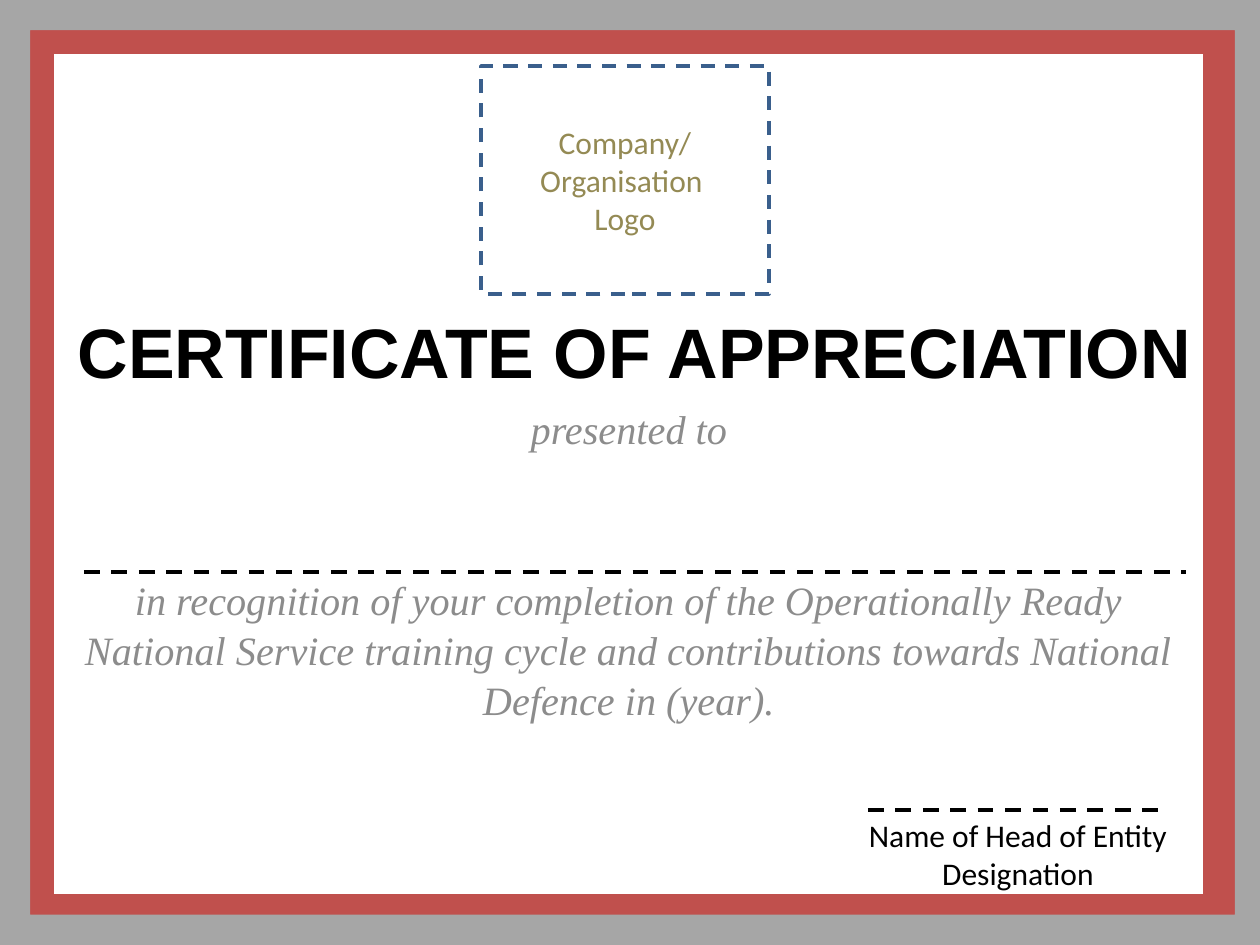
"""Build a certificate of appreciation slide."""
from pptx import Presentation
from pptx.dml.color import RGBColor
from pptx.enum.dml import MSO_LINE as Dash
from pptx.enum.shapes import MSO_CONNECTOR as Conn, MSO_SHAPE as Shape
from pptx.enum.text import MSO_ANCHOR as Anchor, PP_ALIGN as Align
from pptx.oxml.ns import qn
from pptx.util import Pt
from lxml.etree import SubElement

PX = 914400 / 126
BLACK = RGBColor(0, 0, 0)
GRAY = RGBColor(0x8C, 0x8C, 0x8C)
RED = RGBColor(0xC0, 0x50, 0x4D)
SILVER = RGBColor(0xA6, 0xA6, 0xA6)
BLUE = RGBColor(0x3A, 0x5F, 0x8C)
OLIVE = RGBColor(0x94, 0x8A, 0x54)

TITLE = ["CERTIFICATE OF APPRECIATION"]
AWARD = [
    "presented to",
    "in recognition of your completion of the Operationally Ready National "
    "Service training cycle and contributions towards National Defence in (year).",
]
SIGNER = ["Name of Head of Entity", "Designation"]
LOGO = ["Company/", "Organisation ", "Logo"]

FRAMES = [
    ((18, 18, 1221, 912), 0.038, RED, 2),
    ((0, 0, 1265, 945), 0.032, SILVER, 0),
]
RULES = [(84, 1186, 572), (868, 1167, 810)]


def emu(*vals):
    return [round(v * PX) for v in vals]


def write(shape, lines, font="Calibri", size=18, color=BLACK, bold=False,
          italic=False, anchor=Anchor.TOP, wrap=True, gap=0, pitch=None):
    frame = shape.text_frame
    frame.word_wrap = wrap
    frame.vertical_anchor = anchor
    for i, line in enumerate(lines):
        para = frame.paragraphs[0] if i == 0 else frame.add_paragraph()
        para.alignment = Align.CENTER
        para.line_spacing = pitch
        para.space_before = Pt(gap if i else 0)
        run = para.add_run()
        run.text = line
        face = run.font
        face.name, face.size = font, Pt(size)
        face.bold, face.italic = bold, italic
        face.color.rgb = color


def border(line, color, width, dash=None):
    line.color.rgb = color
    line.width = Pt(width)
    line.dash_style = dash


def main():
    deck = Presentation()
    deck.slide_width, deck.slide_height = emu(1260, 945)
    shapes = deck.slides.add_slide(deck.slide_layouts[6]).shapes

    def text(box, lines, **style):
        write(shapes.add_textbox(*emu(*box)), lines, **style)

    text((-35, 249, 1339, 203), TITLE, font="Arial", size=40, bold=True,
         anchor=Anchor.MIDDLE)
    text((54, 396, 1150, 318), AWARD, font="Times New Roman", size=23,
         color=GRAY, italic=True, gap=69, pitch=1.04)

    for box, adj, color, width in FRAMES:
        edge = shapes.add_shape(Shape.FRAME, *emu(*box))
        edge.shadow.inherit = False
        edge.adjustments[0] = adj
        edge.fill.solid()
        edge.fill.fore_color.rgb = color
        if width:
            border(edge.line, color, width)
        else:
            edge.line.fill.background()

    for left, right, y in RULES:
        rule = shapes.add_connector(Conn.STRAIGHT, *emu(left, y, right, y))
        border(rule.line, BLACK, 2.25, Dash.DASH)
        SubElement(rule._element.spPr, qn("a:effectLst"))

    text((854, 810, 328, 89), SIGNER, wrap=False)

    logo = shapes.add_shape(Shape.RECTANGLE, *emu(481, 66, 288, 228))
    logo.shadow.inherit = False
    logo.fill.background()
    border(logo.line, BLUE, 2, Dash.DASH)
    write(logo, LOGO, color=OLIVE, anchor=Anchor.MIDDLE)

    deck.save("out.pptx")


if __name__ == "__main__":
    main()
